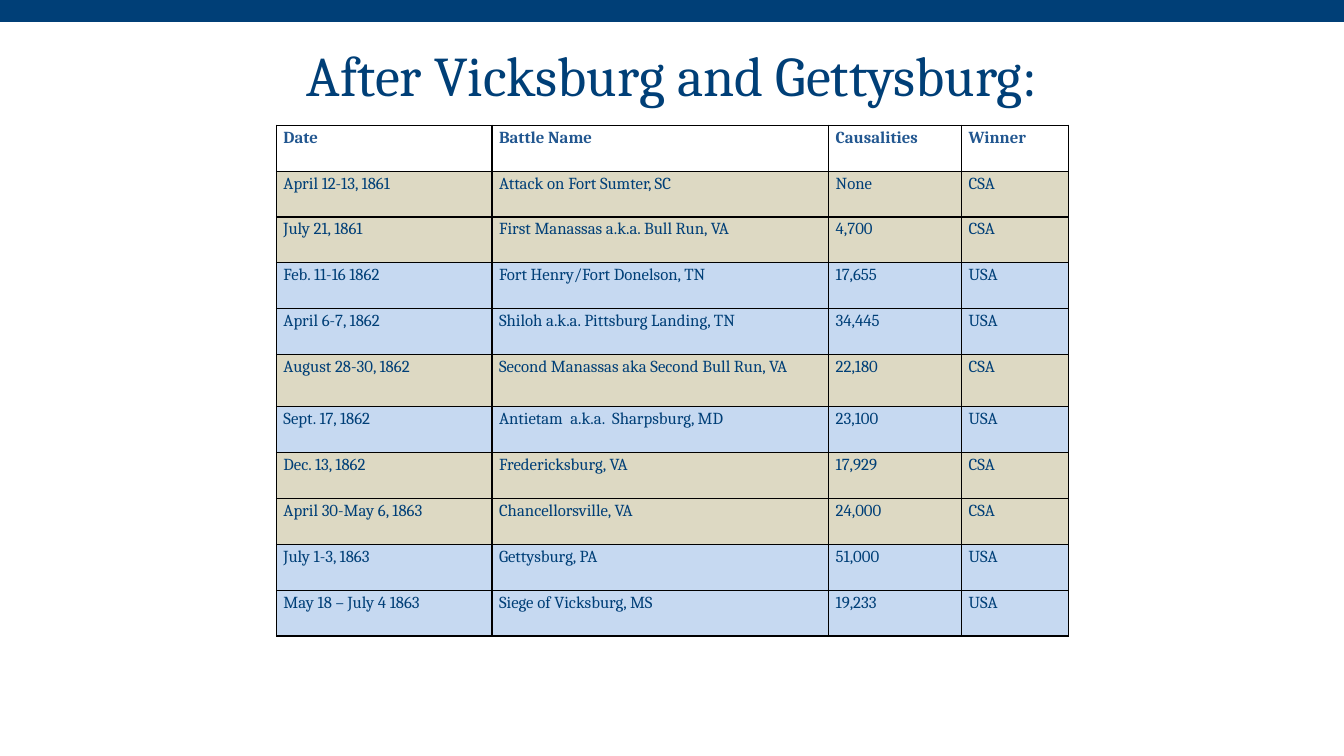
from lxml import etree
from pptx import Presentation
from pptx.dml.color import RGBColor
from pptx.enum import shapes, text
from pptx.oxml import ns
from pptx.util import Pt

# Content
TITLE = "After Vicksburg and Gettysburg:"
HEADINGS = ("Date", "Battle Name", "Causalities", "Winner")
BATTLES = [
    ("April 12-13, 1861", "Attack on Fort Sumter, SC", "None", "CSA"),
    ("July 21, 1861", "First Manassas a.k.a. Bull Run, VA", "4,700", "CSA"),
    ("Feb. 11-16 1862", "Fort Henry/Fort Donelson, TN", "17,655", "USA"),
    ("April 6-7, 1862", "Shiloh a.k.a. Pittsburg Landing, TN", "34,445", "USA"),
    ("August 28-30, 1862", "Second Manassas aka Second Bull Run, VA", "22,180", "CSA"),
    ("Sept. 17, 1862", "Antietam  a.k.a.  Sharpsburg, MD", "23,100", "USA"),
    ("Dec. 13, 1862", "Fredericksburg, VA", "17,929", "CSA"),
    ("April 30-May 6, 1863", "Chancellorsville, VA", "24,000", "CSA"),
    ("July 1-3, 1863", "Gettysburg, PA", "51,000", "USA"),
    ("May 18 – July 4 1863", "Siege of Vicksburg, MS", "19,233", "USA"),
]

# Style
FONT = "Cambria"
NAVY = RGBColor(0x00, 0x3F, 0x77)
HEADING_BLUE = RGBColor(0x22, 0x57, 0x90)
WINNER_FILLS = {"CSA": RGBColor(0xDD, 0xD9, 0xC3), "USA": RGBColor(0xC6, 0xD9, 0xF1)}
BORDER = RGBColor(0, 0, 0)

# Layout in points
PAGE_WIDTH, PAGE_HEIGHT = 960, 540
TABLE_LEFT, TABLE_TOP = 197.5, 89.5
COLUMN_WIDTHS = (154, 240.5, 95, 76)
ROW_HEIGHT, TALL_ROW_HEIGHT, TALL_ROW = 32.75, 37.4, 5


def style_paragraph(para, size, color, spacing, bold=False):
    para.line_spacing = spacing
    font = para.font
    font.name, font.size, font.bold = FONT, Pt(size), bold
    font.color.rgb = color


def add_borders(cell, color, width):
    properties = cell._tc.get_or_add_tcPr()
    for side in ("lnL", "lnR", "lnT", "lnB"):
        line = etree.SubElement(properties, ns.qn(f"a:{side}"), w=str(Pt(width)))
        fill = etree.SubElement(line, ns.qn("a:solidFill"))
        etree.SubElement(fill, ns.qn("a:srgbClr"), val=str(color))


def fill_cell(cell, words, color, fill, bold):
    cell.margin_left = cell.margin_right = Pt(5)
    cell.margin_top = cell.margin_bottom = 0
    cell.text = words
    style_paragraph(cell.text_frame.paragraphs[0], 12, color, 1.15, bold)
    add_borders(cell, BORDER, 1)
    if fill is None:
        cell.fill.background()
    else:
        cell.fill.solid()
        cell.fill.fore_color.rgb = fill


def add_banner(page):
    banner = page.shapes.add_shape(
        shapes.MSO_SHAPE.RECTANGLE, 0, 0, Pt(PAGE_WIDTH), Pt(15.75))
    banner.shadow.inherit = False
    banner.fill.solid()
    banner.fill.fore_color.rgb = NAVY
    banner.line.fill.background()


def add_title(page):
    box = page.shapes.add_textbox(Pt(66), Pt(22.5), Pt(828), Pt(67))
    frame = box.text_frame
    frame.word_wrap = True
    frame.vertical_anchor = text.MSO_ANCHOR.MIDDLE
    para = frame.paragraphs[0]
    para.text = TITLE
    para.alignment = text.PP_ALIGN.CENTER
    style_paragraph(para, 40, NAVY, 0.9)


def add_battle_table(page):
    rows = [HEADINGS, *BATTLES]
    heights = [TALL_ROW_HEIGHT if i == TALL_ROW else ROW_HEIGHT for i in range(len(rows))]
    table = page.shapes.add_table(
        len(rows), len(HEADINGS), Pt(TABLE_LEFT), Pt(TABLE_TOP),
        Pt(sum(COLUMN_WIDTHS)), Pt(sum(heights))).table
    table.first_row = table.horz_banding = False
    for column, width in zip(table.columns, COLUMN_WIDTHS):
        column.width = Pt(width)
    for i, (row, height, values) in enumerate(zip(table.rows, heights, rows)):
        row.height = Pt(height)
        heading = i == 0
        color = HEADING_BLUE if heading else NAVY
        fill = WINNER_FILLS.get(values[-1])
        for cell, words in zip(row.cells, values):
            fill_cell(cell, words, color, fill, heading)


def main():
    deck = Presentation()
    deck.slide_width, deck.slide_height = Pt(PAGE_WIDTH), Pt(PAGE_HEIGHT)
    page = deck.slides.add_slide(deck.slide_layouts[6])
    add_banner(page)
    add_title(page)
    add_battle_table(page)
    deck.save("out.pptx")


if __name__ == "__main__":
    main()
